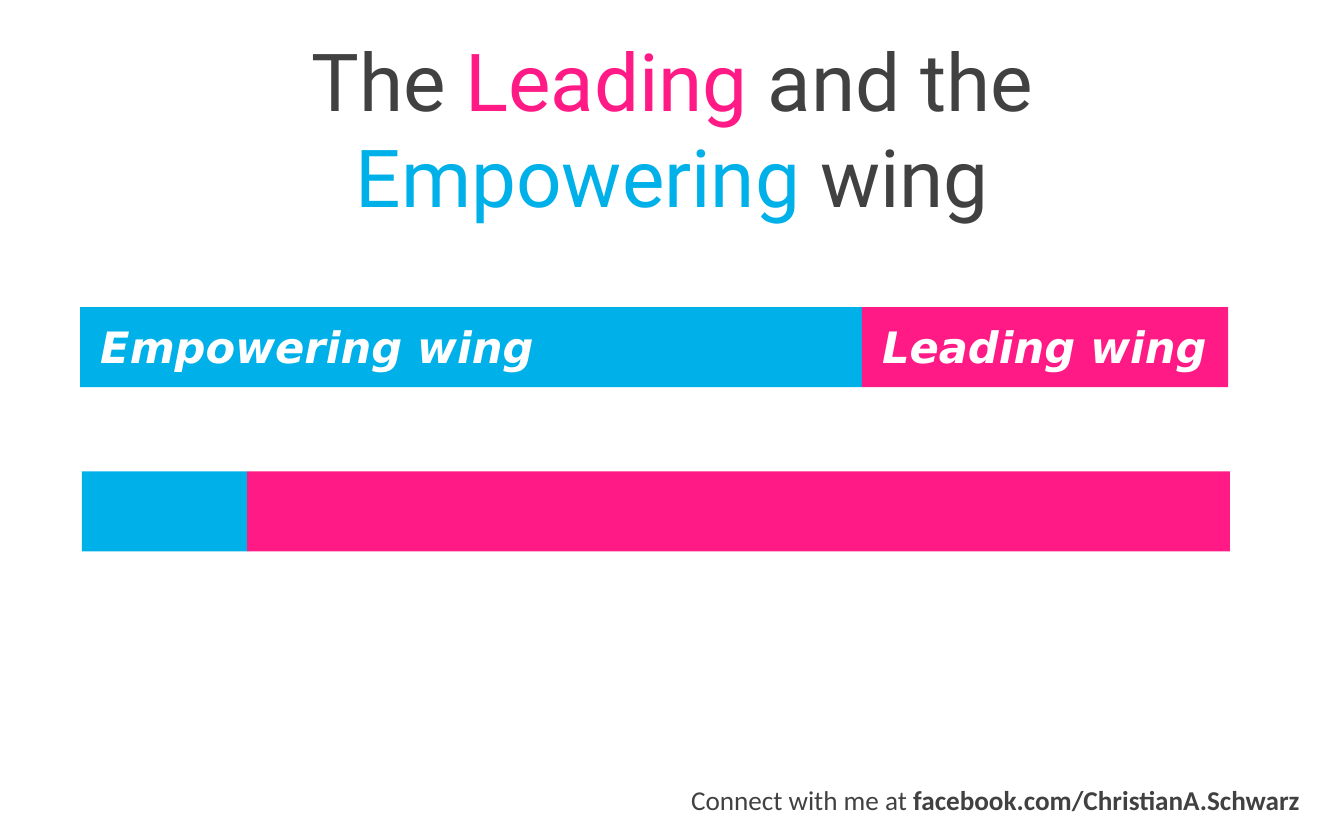
import pptx
import pptx.util
import pptx.dml.color
import pptx.enum.text
import pptx.enum.shapes

Inches = pptx.util.Inches
Pt = pptx.util.Pt
Align = pptx.enum.text.PP_ALIGN

COLORS = {"ink": "414141", "pink": "FF1A86", "blue": "00B0E8", "white": "FFFFFF"}
BAR_H = 1.39

TITLE = [
    [("The ", "ink", False), ("Leading", "pink", False), (" and the", "ink", False)],
    [("Empowering", "blue", False), (" wing", "ink", False)],
]
FOOTER = [[
    ("Connect with me at ", "ink", False),
    ("facebook.com/ChristianA.Schwarz", "ink", True),
]]
BARS = [
    (1.39, 5.33, [("blue", 13.57), ("pink", 6.36)]),
    (1.42, 8.18, [("blue", 2.87), ("pink", 17.06)]),
]
LABELS = [
    ("Empowering wing", 1.74, 9.61, Align.LEFT),
    ("Leading wing", 13.71, 7.24, Align.RIGHT),
]


def rgb(name):
    return pptx.dml.color.RGBColor.from_string(COLORS[name])


def add_text(slide, box, lines, font, size, align, inset=0, wrap=True):
    frame = slide.shapes.add_textbox(*map(Inches, box)).text_frame
    frame.word_wrap = wrap
    frame.vertical_anchor = pptx.enum.text.MSO_ANCHOR.MIDDLE
    frame.margin_left = frame.margin_right = Inches(inset)
    frame.margin_top = frame.margin_bottom = Inches(inset)
    para = frame.paragraphs[0]
    para.alignment = align
    para.font.name = font
    para.font.size = Pt(size)
    for row, line in enumerate(lines):
        if row:
            para.add_line_break()
        for text, color, bold in line:
            run = para.add_run()
            run.text = text
            run.font.color.rgb = rgb(color)
            run.font.bold = bold
    return para


def add_bar(slide, left, top, parts):
    for color, width in parts:
        bar = slide.shapes.add_shape(
            pptx.enum.shapes.MSO_SHAPE.RECTANGLE,
            Inches(left), Inches(top), Inches(width), Inches(BAR_H),
        )
        bar.shadow.inherit = False
        bar.fill.solid()
        bar.fill.fore_color.rgb = rgb(color)
        bar.line.fill.background()
        left += width


def main():
    deck = pptx.Presentation()
    deck.slide_width = Inches(23.33)
    deck.slide_height = Inches(14.58)
    slide = deck.slides.add_slide(deck.slide_layouts[6])

    add_text(slide, (10.25, 13.53, 12.31, 0.69), FOOTER, "Calibri", 34,
             Align.RIGHT, wrap=False)
    title = add_text(slide, (0.64, 0.38, 22.06, 3.65), TITLE, "Roboto", 100,
                     Align.CENTER, inset=0.07)
    title.line_spacing = Pt(120)

    for left, top, parts in BARS:
        add_bar(slide, left, top, parts)

    for text, left, width, align in LABELS:
        label = add_text(slide, (left, 5.56, width, 0.91),
                         [[(text, "white", True)]], "DejaVu Sans", 54, align)
        label.font.italic = True

    deck.save("out.pptx")


if __name__ == "__main__":
    main()
